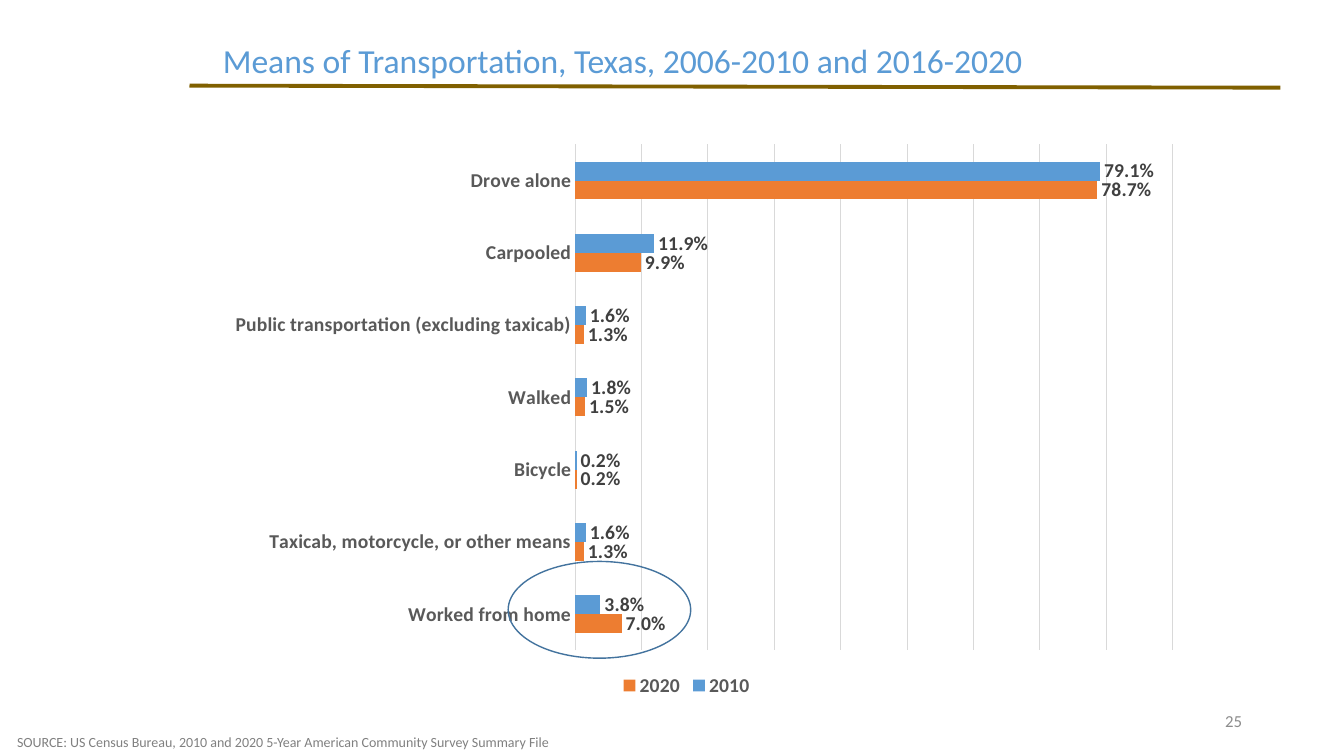
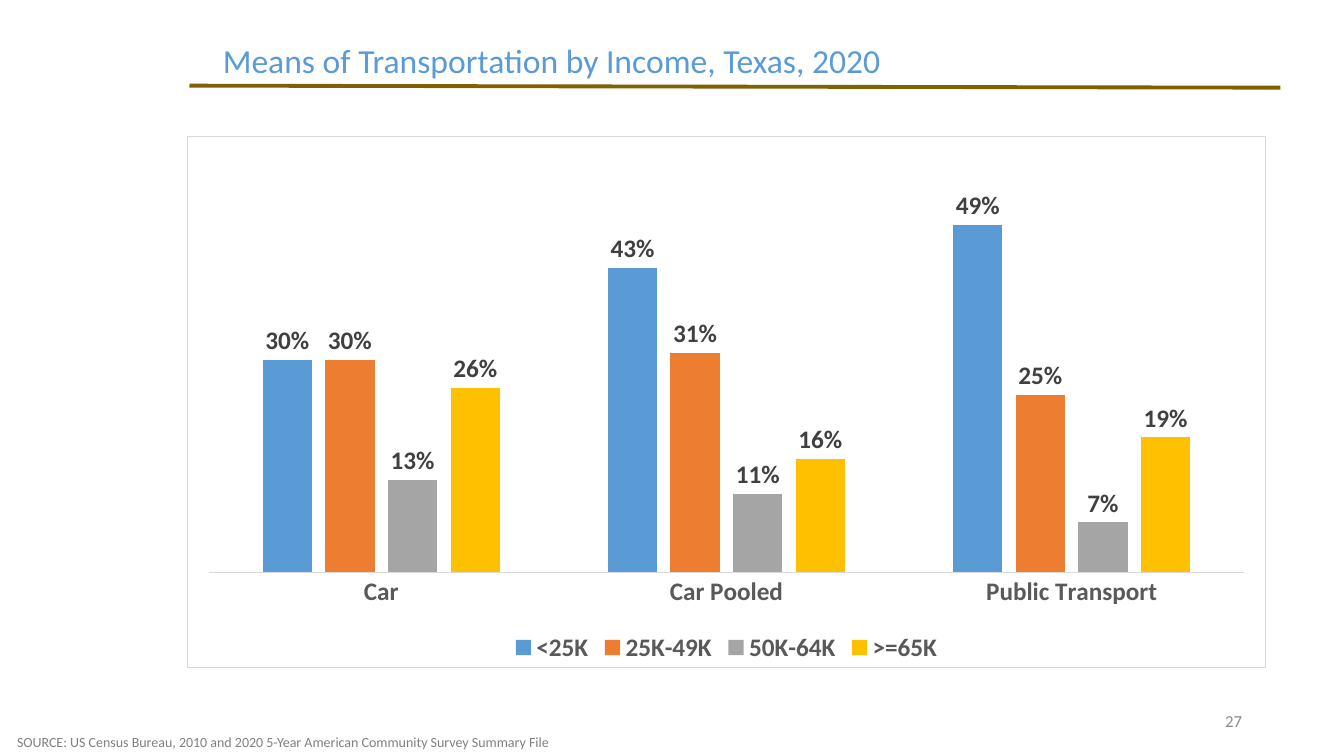
from pptx import Presentation
from pptx.chart.data import CategoryChartData
from pptx.dml.color import RGBColor
from pptx.enum.chart import XL_CHART_TYPE, XL_LABEL_POSITION, XL_LEGEND_POSITION, XL_TICK_MARK
from pptx.enum.shapes import MSO_CONNECTOR, MSO_SHAPE
from pptx.enum.text import MSO_ANCHOR, MSO_AUTO_SIZE, PP_ALIGN
from pptx.oxml import parse_xml
from pptx.oxml.ns import nsdecls, qn
from pptx.util import Inches, Pt

WIDE, HIGH = Inches(13.333), Inches(7.5)
FACE = "Calibri"
BLUE, ORANGE, GRAY, GOLD = "5B9BD5", "ED7D31", "A5A5A5", "FFC000"
RULE, RING, GRID = "806000", "43739E", "D9D9D9"
LABEL, AXIS, NOTE, PAGE = "404040", "595959", "808080", "8C8C8C"
SOURCE = "SOURCE: US Census Bureau, 2010 and 2020 5-Year American Community Survey Summary File"


def color(code):
    return RGBColor.from_string(code)


def place(*shares):
    """Turn percentages of the slide (x, y, x, y) into lengths."""
    return [int(side * share / 100) for side, share in zip((WIDE, HIGH) * 2, shares)]


def style(font, code, **values):
    for name, value in ({"name": FACE} | values).items():
        setattr(font, name, value)
    font.color.rgb = color(code)


def stroke(line, code, width):
    line.color.rgb = color(code)
    line.width = Pt(width)


# Text
def write(shape, text, size, code, align=PP_ALIGN.LEFT, anchor=MSO_ANCHOR.TOP, gap=1.0):
    frame = shape.text_frame
    frame.text = text
    settings = {"word_wrap": True, "auto_size": MSO_AUTO_SIZE.NONE, "vertical_anchor": anchor}
    for name, value in settings.items():
        setattr(frame, name, value)
    para = frame.paragraphs[0]
    para.alignment, para.line_spacing = align, gap
    style(para.runs[0].font, code, size=Pt(size))


def label(slide, area, text, *look, **extra):
    write(slide.shapes.add_textbox(*place(*area)), text, *look, **extra)


# Shared frame: title, rule, page number, source
def page(deck, title, width, number):
    slide = deck.slides.add_slide(deck.slide_layouts[5])
    head = slide.shapes.title
    head.left, head.top, head.width, head.height = place(15.83, 5.2, width, 6.13)
    write(head, title, 24, BLUE, gap=0.9)
    rule = slide.shapes.add_connector(MSO_CONNECTOR.STRAIGHT, *place(14.1, 11.33, 95.27, 11.6))
    stroke(rule.line, RULE, 2.75)
    rule._element.spPr.append(parse_xml(f"<a:effectLst {nsdecls('a')}/>"))
    label(slide, (70.67, 92.67, 22.5, 5.33), str(number), 12, PAGE,
          align=PP_ALIGN.RIGHT, anchor=MSO_ANCHOR.MIDDLE)
    label(slide, (0.53, 96.4, 41.79, 3.6), SOURCE, 10, NOTE)
    return slide


# Charts
def fit(chart, shares):
    """Fix the inner plot area as shares of the chart."""
    area = chart._chartSpace.chart.plotArea
    for old in area.findall(qn("c:layout")):
        area.remove(old)
    parts = "".join(f'<c:{tag} val="{share}"/>' for tag, share in zip("xywh", shares))
    area.insert(0, parse_xml(
        f'<c:layout {nsdecls("c")}><c:manualLayout><c:layoutTarget val="inner"/>'
        f'<c:xMode val="edge"/><c:yMode val="edge"/>{parts}</c:manualLayout></c:layout>'))


def border(chart):
    chart._chartSpace.find(qn("c:txPr")).addprevious(parse_xml(
        f'<c:spPr {nsdecls("c", "a")}><a:noFill/><a:ln w="{Pt(0.75)}"><a:solidFill>'
        f'<a:srgbClr val="{GRID}"/></a:solidFill></a:ln></c:spPr>'))


def graph(slide, kind, area, names, rows, size, form, top, gap, lap, plot):
    data = CategoryChartData(number_format=form)
    data.categories = names
    for name, _, values in rows:
        data.add_series(name, values)
    chart = slide.shapes.add_chart(kind, *place(*area), data).chart
    bold = {"size": Pt(size), "bold": True}
    style(chart.font, "000000", **bold)
    chart.has_title = False
    chart.has_legend = True
    chart.legend.position = XL_LEGEND_POSITION.BOTTOM
    chart.legend.include_in_layout = False
    style(chart.legend.font, AXIS, **bold)

    # Axes
    cats, vals = chart.category_axis, chart.value_axis
    cats.major_tick_mark = XL_TICK_MARK.NONE
    style(cats.tick_labels.font, AXIS, **bold)
    stroke(cats.format.line, GRID, 0.75)
    vals.minimum_scale, vals.maximum_scale, vals.major_unit = 0, top, 0.1
    vals.has_major_gridlines = False
    vals.visible = False

    # Bars and their values
    bars = chart.plots[0]
    bars.gap_width, bars.overlap, bars.vary_by_categories = gap, lap, False
    for row, (_, code, _) in zip(bars.series, rows):
        row.format.fill.solid()
        row.format.fill.fore_color.rgb = color(code)
        marks = row.data_labels
        look = {"show_value": True, "number_format": form, "number_format_is_linked": False,
                "position": XL_LABEL_POSITION.OUTSIDE_END}
        for name, value in look.items():
            setattr(marks, name, value)
        style(marks.font, LABEL, **bold)
    fit(chart, plot)
    return chart


def ring(slide, area):
    oval = slide.shapes.add_shape(MSO_SHAPE.OVAL, *place(*area))
    oval.shadow.inherit = False
    oval.fill.background()
    stroke(oval.line, RING, 1)


# Slides
def means(deck):
    slide = page(deck, "Means of Transportation, Texas, 2006-2010 and 2016-2020", 61.59, 25)
    names = ["Drove alone", "Carpooled", "Public transportation (excluding taxicab)", "Walked",
             "Bicycle", "Taxicab, motorcycle, or other means", "Worked from home"]
    rows = [("2010", BLUE, (0.791, 0.119, 0.016, 0.018, 0.002, 0.016, 0.038)),
            ("2020", ORANGE, (0.787, 0.099, 0.013, 0.015, 0.002, 0.013, 0.07))]
    chart = graph(slide, XL_CHART_TYPE.BAR_CLUSTERED, (13.43, 17.6, 75.32, 75.2), names, rows,
                  size=14, form="0.0%", top=0.9, gap=182, lap=0, plot=(0.39, 0.02, 0.59, 0.89))
    chart.category_axis.reverse_order = True
    chart.value_axis.has_major_gridlines = True
    stroke(chart.value_axis.major_gridlines.format.line, GRID, 0.75)
    ring(slide, (37.81, 74.27, 13.58, 12.8))


def income(deck):
    slide = page(deck, "Means of Transportation by Income, Texas, 2020", 50.94, 27)
    rows = [("<25K", BLUE, (0.3, 0.43, 0.49)), ("25K-49K", ORANGE, (0.3, 0.31, 0.25)),
            ("50K-64K", GRAY, (0.13, 0.11, 0.07)), (">=65K", GOLD, (0.26, 0.16, 0.19))]
    chart = graph(slide, XL_CHART_TYPE.COLUMN_CLUSTERED, (13.88, 18, 80.35, 70.4),
                  ["Car", "Car Pooled", "Public Transport"], rows, size=18, form="0%",
                  top=0.6, gap=219, lap=-27, plot=(0.02, 0.02, 0.96, 0.8))
    border(chart)


def main():
    deck = Presentation()
    deck.slide_width, deck.slide_height = WIDE, HIGH
    means(deck)
    income(deck)
    deck.save("out.pptx")


if __name__ == "__main__":
    main()
